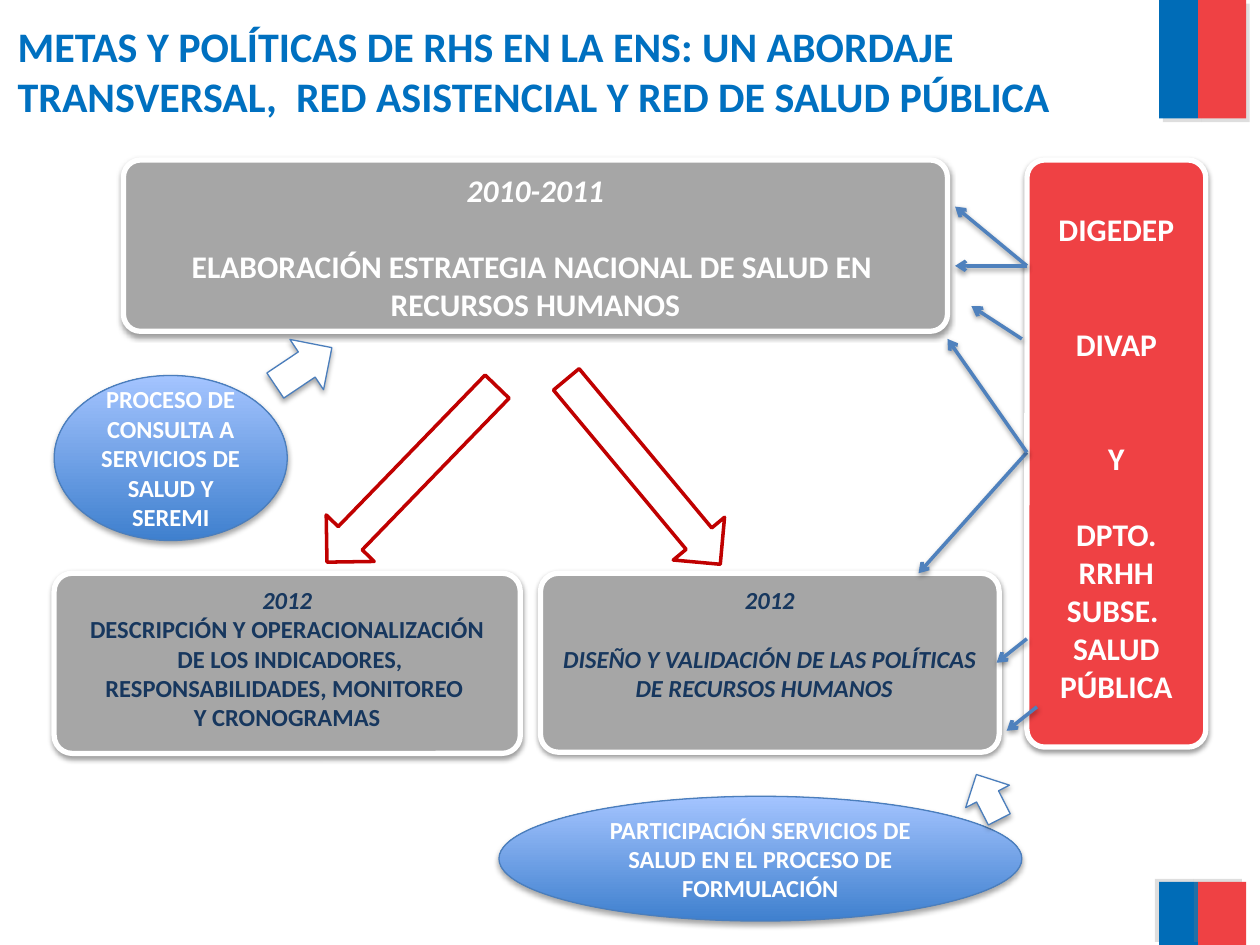
from lxml import etree
from pptx import Presentation
from pptx.dml.color import RGBColor
from pptx.enum.shapes import MSO_CONNECTOR as Link, MSO_SHAPE as Shape
from pptx.enum.text import MSO_ANCHOR as Anchor, MSO_AUTO_SIZE as Fit, PP_ALIGN as Align
from pptx.oxml import parse_xml
from pptx.oxml.ns import nsdecls, qn
from pptx.util import Inches, Pt

WHITE = RGBColor(0xFF, 0xFF, 0xFF)
GRAY = RGBColor(0xA6, 0xA6, 0xA6)
RED = RGBColor(0xEF, 0x41, 0x44)
BLUE = RGBColor(0x00, 0x6C, 0xB7)
TITLE = RGBColor(0x00, 0x70, 0xC0)
NAVY = RGBColor(0x17, 0x37, 0x5E)
CRIMSON = RGBColor(0xC0, 0x00, 0x00)
STEEL = RGBColor(0x4F, 0x81, 0xBD)
EDGE = RGBColor(0x4B, 0x7E, 0xBC)
DEEP = RGBColor(0x3F, 0x80, 0xCE)
PALE = RGBColor(0xA4, 0xC4, 0xFF)

# Shadows: colour, opacity in percent, blur and distance in points, angle
BOX_SHADOW = ("000000", 38, 3.1, 1.6, 90)
OVAL_SHADOW = ("000000", 35, 3.1, 1.8, 90)

LINE = 1.22  # line height of the font, relative to its size


def cast(shape, shadow):
    """Add an outer shadow; call after fill and line are set."""
    color, alpha, blur, dist, angle = shadow
    shape._element.spPr.append(parse_xml(
        f'<a:effectLst {nsdecls("a")}><a:outerShdw blurRad="{Pt(blur)}" '
        f'dist="{Pt(dist)}" dir="{angle * 60000}" algn="ctr" rotWithShape="0">'
        f'<a:srgbClr val="{color}"><a:alpha val="{alpha * 1000}"/></a:srgbClr>'
        f'</a:outerShdw></a:effectLst>'))


def add_shape(slide, kind, at, fill=None, line=None, width=0, shadow=None):
    shape = slide.shapes.add_shape(kind, *map(Inches, at))
    if fill is not None:
        shape.fill.solid()
        shape.fill.fore_color.rgb = fill
    if line is None:
        shape.line.fill.background()
    else:
        shape.line.color.rgb = line
        shape.line.width = Pt(width)
    if shadow:
        cast(shape, shadow)
    else:
        shape.shadow.inherit = False
    return shape


def style(para, size, color, italic=False, align=Align.CENTER):
    para.alignment = align
    for run in para.runs:
        font = run.font
        font.name, font.size, font.bold = "Calibri", Pt(size), True
        font.italic = italic
        font.color.rgb = color


def write(shape, rows, size, color, anchor=Anchor.TOP):
    """Fill a shape with rows of (text, italic, lines of space above)."""
    frame = shape.text_frame
    frame.word_wrap = True
    frame.vertical_anchor = anchor
    for i, (text, italic, gap) in enumerate(rows):
        para = frame.add_paragraph() if i else frame.paragraphs[0]
        para.text = text
        style(para, size, color, italic)
        if i:
            para.space_before = Pt(gap * size * LINE)
        else:
            frame.margin_top = Inches(0.05) + Pt(gap * size * LINE)


def add_box(slide, at, fill, rows, size, color):
    box = add_shape(slide, Shape.ROUNDED_RECTANGLE, at, fill, WHITE, 3, BOX_SHADOW)
    box.adjustments[0] = 0.1
    write(box, rows, size, color)


def add_oval(slide, at, text):
    oval = add_shape(slide, Shape.OVAL, at, None, EDGE, 0.75, OVAL_SHADOW)
    oval.fill.gradient()
    oval.fill.gradient_angle = 90
    for stop, color, pos in zip(oval.fill.gradient_stops, (DEEP, PALE), (0, 1)):
        stop.color.rgb = color
        stop.position = pos
    write(oval, [(text, False, 0)], 14, WHITE, Anchor.MIDDLE)


def add_block(slide, at, turn, line, width, shadow=None):
    """Add a rotated block arrow."""
    block = add_shape(slide, Shape.RIGHT_ARROW, at, WHITE, line, width, shadow)
    block.rotation = turn


def add_arrow(slide, start, end):
    arrow = slide.shapes.add_connector(
        Link.STRAIGHT, *map(Inches, (*start, *end)))
    arrow.line.color.rgb = STEEL
    arrow.line.width = Pt(2)
    etree.SubElement(arrow.line._get_or_add_ln(), qn("a:tailEnd"), type="arrow")
    cast(arrow, BOX_SHADOW)


def add_flag(slide, top, height, angle):
    for left, width, color in ((9.2, 0.31, BLUE), (9.51, 0.38, RED)):
        add_shape(slide, Shape.RECTANGLE, (left, top, width, height), color,
                  shadow=("808080", 25, 0, 3, angle))


def add_title(slide, text):
    title = slide.shapes.title
    title.left, title.top, title.width, title.height = map(
        Inches, (0.04, 0.1, 9.53, 0.92))
    frame = title.text_frame
    frame.text = text
    frame.word_wrap = True
    frame.auto_size = Fit.NONE
    frame.vertical_anchor = Anchor.MIDDLE
    style(frame.paragraphs[0], 24, TITLE, align=Align.LEFT)


def main():
    deck = Presentation()
    deck.slide_width, deck.slide_height = Inches(10), Inches(7.5)
    slide = deck.slides.add_slide(deck.slide_layouts[5])

    add_flag(slide, 0, 0.94, 45)
    add_flag(slide, 7, 0.5, 215)
    add_title(slide, "METAS Y POLÍTICAS DE RHS EN LA ENS: UN ABORDAJE "
                     "TRANSVERSAL,  RED ASISTENCIAL Y RED DE SALUD PÚBLICA")

    add_box(slide, (0.98, 1.27, 6.54, 1.36), GRAY, [
        ("2010-2011", True, 0),
        ("ELABORACIÓN ESTRATEGIA NACIONAL DE SALUD EN  RECURSOS HUMANOS", False, 1),
    ], 18, WHITE)
    add_block(slide, (2.3, 3.5, 1.94, 0.53), 134.1, CRIMSON, 2)
    add_box(slide, (0.43, 4.55, 3.7, 1.43), GRAY, [
        ("2012", True, 0),
        ("DESCRIPCIÓN Y OPERACIONALIZACIÓN", False, 0),
        (" DE LOS INDICADORES, RESPONSABILIDADES, MONITOREO ", False, 0),
        ("Y CRONOGRAMAS", False, 0),
    ], 14, NAVY)
    add_block(slide, (4.15, 3.48, 1.91, 0.53), 50.2, CRIMSON, 2)
    add_box(slide, (4.29, 4.55, 3.64, 1.42), GRAY, [
        ("2012", True, 0),
        ("DISEÑO Y VALIDACIÓN DE LAS POLÍTICAS DE RECURSOS HUMANOS  ", True, 1),
    ], 14, NAVY)
    add_box(slide, (8.15, 1.27, 1.42, 4.66), RED, [
        ("DIGEDEP", False, 1),
        ("DIVAP", False, 2),
        ("Y", False, 2),
        ("DPTO. RRHH", False, 1),
        ("SUBSE.  SALUD PÚBLICA", False, 0),
    ], 18, WHITE)

    upper, middle = (8.15, 2.11), (8.15, 3.59)
    for start, end in (
        (upper, (7.58, 1.64)),
        (upper, (7.58, 2.11)),
        ((8.11, 2.69), (7.71, 2.43)),
        (middle, (7.29, 4.55)),
        ((8.15, 5.07), (7.91, 5.26)),
        ((8.23, 5.61), (7.99, 5.8)),
        (middle, (7.52, 2.69)),
    ):
        add_arrow(slide, start, end)

    add_oval(slide, (0.43, 2.98, 1.85, 1.31),
             "PROCESO DE CONSULTA A SERVICIOS DE SALUD Y SEREMI")
    add_oval(slide, (3.96, 6.32, 4.15, 0.99),
             "PARTICIPACIÓN SERVICIOS DE SALUD EN EL PROCESO DE FORMULACIÓN")
    add_block(slide, (2.14, 2.67, 0.54, 0.48), 326.2, EDGE, 0.75, OVAL_SHADOW)
    add_block(slide, (7.64, 6.13, 0.4, 0.39), 242.9, EDGE, 0.75, OVAL_SHADOW)

    deck.save("out.pptx")


if __name__ == "__main__":
    main()
